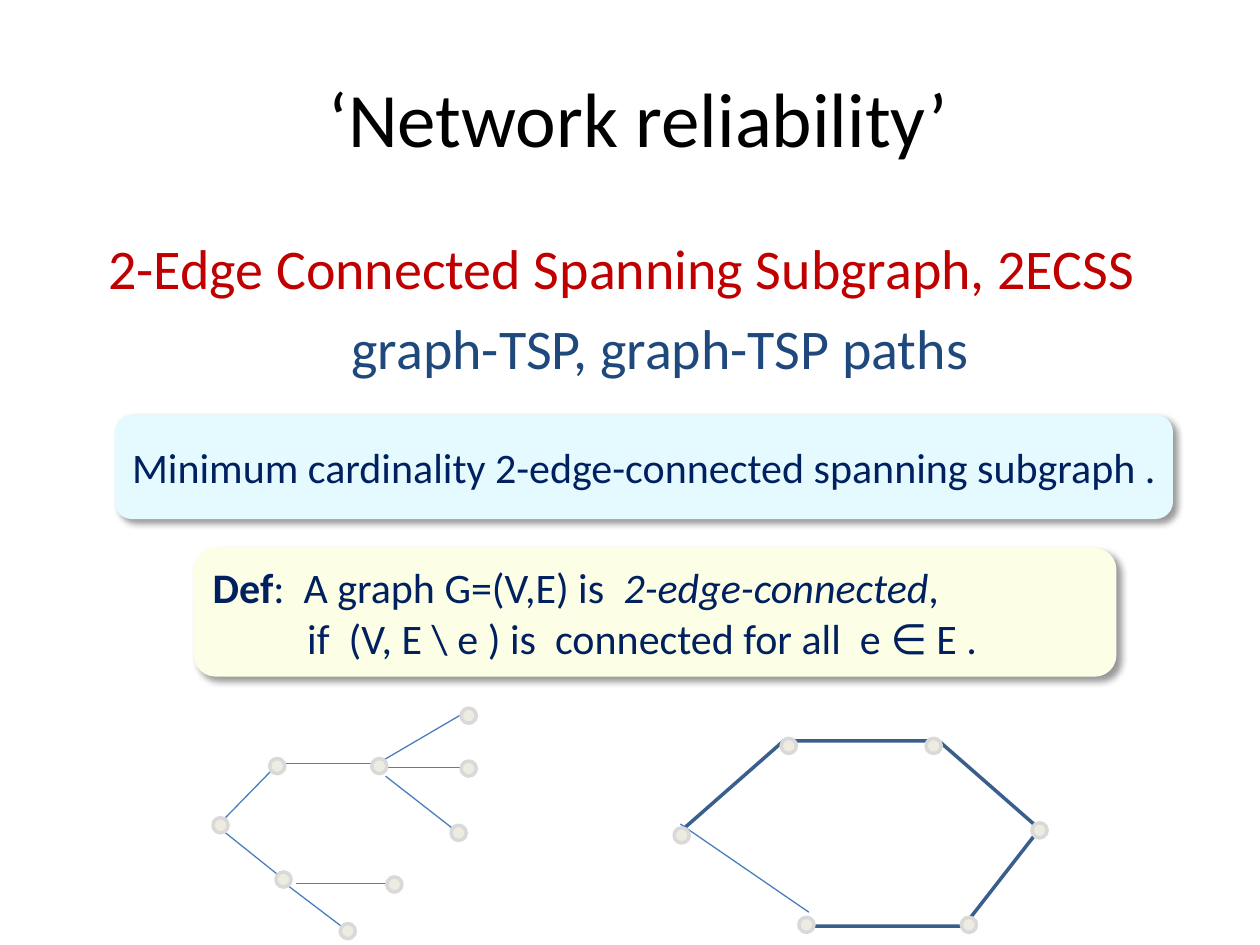
import pptx
import pptx.dml.color
import pptx.enum.shapes
import pptx.enum.text
import pptx.oxml
import pptx.oxml.ns
import pptx.util

COLUMNS, ROWS = 100, 75
CELL = pptx.util.Inches(0.1)
NODE_SIZE = 1.2
NAVY, EDGE_BLUE, CYCLE_BLUE = "002060", "4B7EBC", "3A5F8C"

TREE_EDGES = [
    (22.7, 60.6, 29.5, 60.6), (17.5, 65.3, 21.7, 61.0),
    (17.4, 65.7, 22.4, 69.7), (23.5, 70.1, 31.0, 70.1),
    (22.6, 70.1, 27.6, 73.9), (29.8, 60.7, 36.8, 56.6),
    (29.5, 60.9, 37.0, 60.9), (30.6, 61.6, 36.5, 66.2),
]
TREE_NODES = [
    (30.1, 60.8), (37.2, 61.0), (37.2, 56.8), (22.0, 60.8), (17.5, 65.5),
    (22.5, 69.8), (31.3, 70.2), (27.6, 73.9), (36.4, 66.1),
]
CYCLE_EDGE = (54.0, 65.4, 64.2, 72.4)
CYCLE_OUTLINE = [
    (54.0, 66.0), (62.2, 58.8), (74.5, 58.8), (82.5, 65.8),
    (76.5, 73.5), (65.0, 73.5), (64.7, 73.5),
]
CYCLE_NODES = [
    (64.0, 73.4), (62.6, 59.2), (74.1, 59.2),
    (82.5, 65.9), (54.1, 66.3), (76.9, 73.4),
]


def cells(*counts):
    """Turn counts of grid columns or rows into lengths."""
    return [round(count * CELL) for count in counts]


def color(value):
    """Turn a hex string into a colour."""
    return pptx.dml.color.RGBColor.from_string(value)


def add_effects(element, shadow=False):
    """Give a shape's element an empty effect list or a soft shadow."""
    effects = pptx.oxml.parse_xml(
        f'<a:effectLst {pptx.oxml.ns.nsdecls("a")}>'
        + ('<a:outerShdw blurRad="50800" dist="38100" dir="2700000" '
           'algn="tl" rotWithShape="0"><a:srgbClr val="000000">'
           '<a:alpha val="40000"/></a:srgbClr></a:outerShdw>' if shadow else "")
        + "</a:effectLst>"
    )
    element.spPr.append(effects)


def style_paragraph(paragraph, size, ink):
    """Set the font that all runs of a paragraph share."""
    paragraph.font.name = "Calibri"
    paragraph.font.size = pptx.util.Pt(size)
    paragraph.font.color.rgb = color(ink)


def add_heading(slide, text, box, size, ink, anchor="TOP"):
    """Add one centred line of text."""
    shape = slide.shapes.add_textbox(*cells(*box))
    frame = shape.text_frame
    frame.word_wrap = True
    frame.vertical_anchor = pptx.enum.text.MSO_ANCHOR[anchor]
    paragraph = frame.paragraphs[0]
    paragraph.text = text
    paragraph.alignment = pptx.enum.text.PP_ALIGN.CENTER
    style_paragraph(paragraph, size, ink)


def add_card(slide, box, fill, lines):
    """Add a shadowed rounded box with lines of (text, style) runs."""
    shape = slide.shapes.add_shape(
        pptx.enum.shapes.MSO_SHAPE.ROUNDED_RECTANGLE, *cells(*box))
    shape.fill.solid()
    shape.fill.fore_color.rgb = color(fill)
    shape.line.fill.background()
    add_effects(shape.element, shadow=True)
    frame = shape.text_frame
    frame.word_wrap = False
    frame.vertical_anchor = pptx.enum.text.MSO_ANCHOR.MIDDLE
    for index, (indent, runs) in enumerate(lines):
        paragraph = frame.add_paragraph() if index else frame.paragraphs[0]
        paragraph.alignment = pptx.enum.text.PP_ALIGN.LEFT
        style_paragraph(paragraph, 24, NAVY)
        if indent:
            paragraph._p.get_or_add_pPr().set("marL", str(cells(indent)[0]))
        for text, style in runs:
            run = paragraph.add_run()
            run.text = text
            if style == "bold":
                run.font.bold = True
            if style == "italic":
                run.font.italic = True


def add_edge(slide, edge):
    """Add a thin graph edge."""
    connector = slide.shapes.add_connector(
        pptx.enum.shapes.MSO_CONNECTOR.STRAIGHT, *cells(*edge))
    connector.line.color.rgb = color(EDGE_BLUE)
    connector.line.width = pptx.util.Pt(0.75)
    add_effects(connector._element)


def add_node(slide, center):
    """Add a round graph node around its centre."""
    corner = [middle - NODE_SIZE / 2 for middle in center]
    shape = slide.shapes.add_shape(
        pptx.enum.shapes.MSO_SHAPE.OVAL, *cells(*corner, NODE_SIZE, NODE_SIZE))
    shape.shadow.inherit = False
    shape.fill.solid()
    shape.fill.fore_color.rgb = color("EEECE1")
    shape.line.color.rgb = color("D9D9D9")
    shape.line.width = pptx.util.Pt(2)


def add_outline(slide, points):
    """Add an open thick line through the points."""
    start, *rest = [cells(*point) for point in points]
    builder = slide.shapes.build_freeform(*start)
    builder.add_line_segments(rest, close=False)
    shape = builder.convert_to_shape()
    shape.shadow.inherit = False
    shape.fill.background()
    shape.line.color.rgb = color(CYCLE_BLUE)
    shape.line.width = pptx.util.Pt(2)


def main():
    """Build the slide and save it."""
    presentation = pptx.Presentation()
    presentation.slide_width, presentation.slide_height = cells(COLUMNS, ROWS)
    slide = presentation.slides.add_slide(presentation.slide_layouts[6])

    add_heading(slide, " ‘Network reliability’", (5, 3, 90, 12.5), 44, "000000", "MIDDLE")
    add_heading(slide, "graph-TSP, graph-TSP paths", (-5.1, 24.4, 115, 7.8), 32, "1F497D")
    add_heading(slide, "2-Edge Connected Spanning Subgraph, 2ECSS",
                (-7.1, 18, 112.9, 12.5), 32, "C00000")
    add_card(slide, (9.1, 32.9, 84, 8.3), "E5FAFF", [
        (0, [("Minimum cardinality 2-edge-connected spanning subgraph .", "plain")]),
    ])
    add_card(slide, (15.4, 43.5, 73.2, 10.2), "FCFFE5", [
        (0, [("Def", "bold"), (":  A graph G=(V,E) is  ", "plain"),
             ("2-edge-connected", "italic"), (",", "plain")]),
        (7.5, [("if  (V, E \\ e ) is  connected for all  e ∈ E .", "plain")]),
    ])

    for edge in TREE_EDGES + [CYCLE_EDGE]:
        add_edge(slide, edge)
    add_outline(slide, CYCLE_OUTLINE)
    for center in TREE_NODES + CYCLE_NODES:
        add_node(slide, center)

    presentation.save("out.pptx")


if __name__ == "__main__":
    main()
